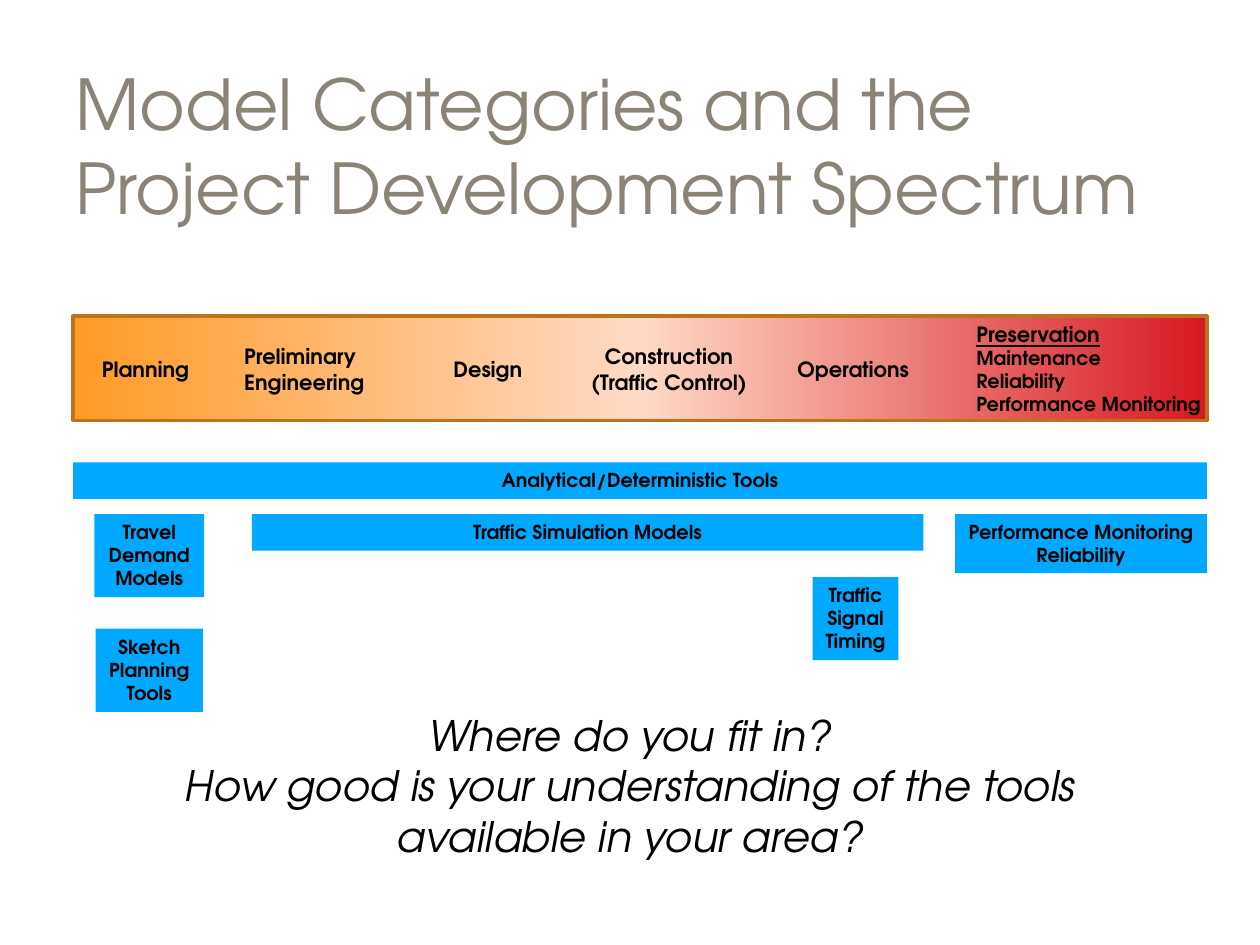
import copy

import pptx
import pptx.dml.color
import pptx.enum.shapes
import pptx.enum.text
import pptx.oxml.ns
import pptx.util

PX = 9144  # EMU in one px, 100 px to the inch
FONT = "TeX Gyre Adventor"
RECT = pptx.enum.shapes.MSO_SHAPE.RECTANGLE
ALIGN = pptx.enum.text.PP_ALIGN


def rgb(color):
    return pptx.dml.color.RGBColor.from_string(color)


def put_text(sp, text, size=12, color="000000", bold=False, italic=False,
             center=False, wrap=False, middle=False):
    anchor = pptx.enum.text.MSO_ANCHOR
    tf = sp.text_frame
    tf.word_wrap = wrap
    tf.auto_size = pptx.enum.text.MSO_AUTO_SIZE.SHAPE_TO_FIT_TEXT
    tf.vertical_anchor = anchor.MIDDLE if middle else anchor.TOP
    tf.text = text
    for p in tf.paragraphs:
        p.alignment = ALIGN.CENTER if center else ALIGN.LEFT
        for r in p.runs:
            r.font.name = FONT
            r.font.size = pptx.util.Pt(size)
            r.font.bold = bold
            r.font.italic = italic
            r.font.color.rgb = rgb(color)
    return tf


prs = pptx.Presentation()
prs.slide_width, prs.slide_height = 1000 * PX, 750 * PX
s = prs.slides.add_slide(prs.slide_layouts[6])

# Title
sp = s.shapes.add_textbox(50 * PX, 42 * PX, 900 * PX, 145 * PX)
put_text(sp, "Model Categories and the Project Development Spectrum",
         size=40, color="8B8376", wrap=True, middle=True)

# Spectrum bar, orange to red
bar = s.shapes.add_shape(RECT, 58 * PX, 251 * PX, 900 * PX, 83 * PX)
bar.shadow.inherit = False
bar.line.color.rgb = rgb("BD731C")
bar.line.width = pptx.util.Pt(2)
bar.fill.gradient()
bar.fill.gradient_angle = 0
stops = bar._element.spPr.find(".//" + pptx.oxml.ns.qn("a:gsLst"))
stops.append(copy.deepcopy(stops[0]))
for stop, position, color in zip(bar.fill.gradient_stops, (0, 0.5, 1),
                                 ("FF9B26", "FFDAC6", "D71923")):
    stop.position = position
    stop.color.rgb = rgb(color)

# Project phases on the bar
phases = [
    ("Planning", 71, 278, 91, 30, False),
    ("Preliminary\nEngineering", 184, 268, 116, 50, False),
    ("Design", 350, 278, 75, 30, False),
    ("Construction\n(Traffic Control)", 459, 268, 144, 50, True),
    ("Operations", 623, 278, 111, 30, False),
    ("Preservation\nMaintenance\nReliability\nPerformance Monitoring",
     765, 250, 200, 86, False),
]
for text, x, y, w, h, center in phases:
    sp = s.shapes.add_textbox(x * PX, y * PX, w * PX, h * PX)
    tf = put_text(sp, text, bold=True, center=center)

# The last phase has an underlined heading over smaller items
heading, *items = tf.paragraphs
heading.runs[0].font.underline = True
for p in items:
    p.runs[0].font.size = pptx.util.Pt(11)

# Tool boxes: text, left, top, width, height, wrap
tools = [
    ("Travel\nDemand\nModels", 75, 408, 87, 66, False),
    ("Sketch\nPlanning\nTools", 76, 499, 85, 66, False),
    ("Traffic\nSignal\nTiming", 645, 458, 68, 66, False),
    ("Analytical/Deterministic Tools", 58, 367, 900, 29, True),
    ("Traffic Simulation Models", 200, 408, 533, 29, True),
    ("Performance Monitoring\nReliability", 758, 408, 200, 47, False),
]
for text, x, y, w, h, wrap in tools:
    sp = s.shapes.add_shape(RECT, x * PX, y * PX, w * PX, h * PX)
    sp.shadow.inherit = False
    sp.fill.solid()
    sp.fill.fore_color.rgb = rgb("00A8FF")
    sp.line.fill.background()
    put_text(sp, text, size=11, bold=True, center=True, wrap=wrap)

# Closing questions
sp = s.shapes.add_textbox(131 * PX, 558 * PX, 738 * PX, 131 * PX)
put_text(sp, "Where do you fit in?\nHow good is your understanding of the tools\n"
         "available in your area?", size=24, italic=True, center=True)

prs.save("out.pptx")
